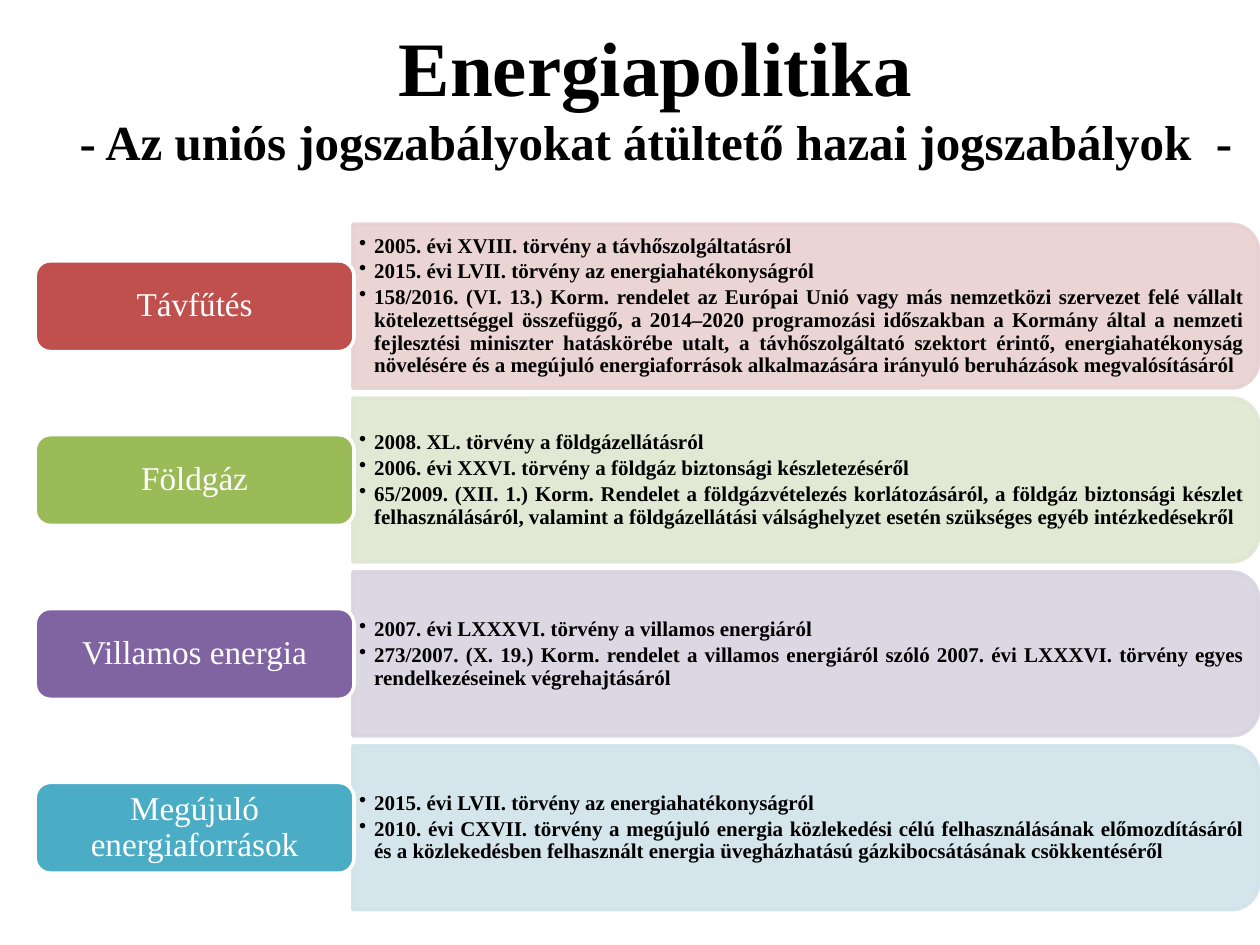
from lxml.etree import SubElement
from pptx import Presentation
from pptx.dml.color import RGBColor
from pptx.enum.shapes import MSO_SHAPE as Shape
from pptx.enum.text import MSO_ANCHOR as Anchor, MSO_AUTO_SIZE as AutoSize, PP_ALIGN as Align
from pptx.oxml.ns import qn
from pptx.util import Inches, Pt

# Content
TITLE = "Energiapolitika"
SUBTITLE = "- Az uniós jogszabályokat átültető hazai jogszabályok  -"
SECTORS = [
    ("Távfűtés", "C0504D", "E8D0D0", [
        "2005. évi XVIII. törvény a távhőszolgáltatásról",
        "2015. évi LVII. törvény az energiahatékonyságról",
        "158/2016. (VI. 13.) Korm. rendelet az Európai Unió vagy más nemzetközi "
        "szervezet felé vállalt kötelezettséggel összefüggő, a 2014–2020 programozási "
        "időszakban a Kormány által a nemzeti fejlesztési miniszter hatáskörébe utalt, "
        "a távhőszolgáltató szektort érintő, energiahatékonyság növelésére és a megújuló "
        "energiaforrások alkalmazására irányuló beruházások megvalósításáról"]),
    ("Földgáz", "9BBB59", "DEE7D1", [
        "2008. XL. törvény a földgázellátásról",
        "2006. évi XXVI. törvény a földgáz biztonsági készletezéséről",
        "65/2009. (XII. 1.) Korm. Rendelet a földgázvételezés korlátozásáról, a földgáz "
        "biztonsági készlet felhasználásáról, valamint a földgázellátási válsághelyzet "
        "esetén szükséges egyéb intézkedésekről"]),
    ("Villamos energia", "8064A2", "D8D3E0", [
        "2007. évi LXXXVI. törvény a villamos energiáról",
        "273/2007. (X. 19.) Korm. rendelet a villamos energiáról szóló 2007. évi LXXXVI. "
        "törvény egyes rendelkezéseinek végrehajtásáról"]),
    ("Megújuló energiaforrások", "4BACC6", "D0E3EA", [
        "2015. évi LVII. törvény az energiahatékonyságról",
        "2010. évi CXVII. törvény a megújuló energia közlekedési célú felhasználásának "
        "előmozdításáról és a közlekedésben felhasznált energia üvegházhatású "
        "gázkibocsátásának csökkentéséről"]),
]

# Layout in inches
FIRST_CENTER, PITCH = 2.43, 1.38
PANEL_LEFT, PANEL_WIDTH, PANEL_HEIGHT = 2.8, 7.19, 1.3
LAWS_WIDTH, LAWS_HEIGHT = 7.13, 1.17
LABEL_LEFT, LABEL_WIDTH, LABEL_HEIGHT = 0.28, 2.53, 0.72


def paint(color_format, color, alpha=None):
    color_format.rgb = RGBColor.from_string(color)
    if alpha:
        clr = color_format._xFill.find(qn("a:srgbClr"))
        SubElement(clr, qn("a:alpha"), val=str(alpha * 1000))


def add_text(para, text, size, color="000000", bold=False):
    span = para.add_run()
    span.text = text
    span.font.name = "Times New Roman"
    span.font.size = Pt(size)
    span.font.bold = bold
    span.font.color.rgb = RGBColor.from_string(color)


def set_frame(frame, side, edge):
    frame.word_wrap = True
    frame.auto_size = AutoSize.NONE
    frame.vertical_anchor = Anchor.MIDDLE
    frame.margin_left = frame.margin_right = Inches(side)
    frame.margin_top = frame.margin_bottom = Inches(edge)


def add_block(page, kind, left, center, width, height, fill, line, alpha=None):
    block = page.shapes.add_shape(kind, Inches(left), Inches(center - height / 2),
                                  Inches(width), Inches(height))
    block.shadow.inherit = False
    block.fill.solid()
    block.line.fill.solid()
    block.line.width = Pt(2)
    for part, color in ((block.fill, fill), (block.line.fill, line)):
        part.fore_color.rgb = RGBColor.from_string(color)
        if alpha:
            clr = part._xPr.find(".//" + qn("a:srgbClr")) if part is block.fill else \
                block.line._ln.find(".//" + qn("a:srgbClr"))
            SubElement(clr, qn("a:alpha"), val=str(alpha * 1000))
    return block


def add_laws(page, center, laws):
    box = page.shapes.add_textbox(Inches(PANEL_LEFT), Inches(center - LAWS_HEIGHT / 2),
                                  Inches(LAWS_WIDTH), Inches(LAWS_HEIGHT))
    frame = box.text_frame
    set_frame(frame, 0.05, 0.03)
    for index, law in enumerate(laws):
        para = frame.paragraphs[0] if index == 0 else frame.add_paragraph()
        para.alignment = Align.JUSTIFY
        para.level = 1
        para.line_spacing = 0.9
        para.space_after = Pt(1.8)
        props = para._p.get_or_add_pPr()
        props.set("marL", str(Inches(0.12)))
        props.set("indent", str(-Inches(0.12)))
        SubElement(props, qn("a:buChar"), char="•")
        add_text(para, law, 12, bold=True)


def main():
    deck = Presentation()
    deck.slide_width, deck.slide_height = Inches(10), Inches(7.5)
    page = deck.slides.add_slide(deck.slide_layouts[5])

    # Title
    title = page.shapes.title
    title.left, title.top = Inches(0.03), Inches(0.13)
    title.width, title.height = Inches(10.35), Inches(1.25)
    set_frame(title.text_frame, 0.1, 0.05)
    para = title.text_frame.paragraphs[0]
    para.alignment = Align.CENTER
    add_text(para, TITLE, 44, bold=True)
    para.add_line_break()
    add_text(para, SUBTITLE, 28, bold=True)

    # One row per sector: panel, laws, label
    for row, (name, color, tint, laws) in enumerate(SECTORS):
        center = FIRST_CENTER + row * PITCH
        panel_left = PANEL_LEFT + (PANEL_WIDTH - PANEL_HEIGHT) / 2
        panel = add_block(page, Shape.ROUND_2_SAME_RECTANGLE, panel_left, center,
                          PANEL_HEIGHT, PANEL_WIDTH, tint, tint, alpha=90)
        panel.rotation = 90
        add_laws(page, center, laws)

        label = add_block(page, Shape.ROUNDED_RECTANGLE, LABEL_LEFT, center,
                          LABEL_WIDTH, LABEL_HEIGHT, color, "FFFFFF")
        set_frame(label.text_frame, 0.08, 0.04)
        para = label.text_frame.paragraphs[0]
        para.alignment = Align.CENTER
        para.line_spacing = 0.9
        add_text(para, name, 19, "FFFFFF")

    deck.save("out.pptx")


if __name__ == "__main__":
    main()
